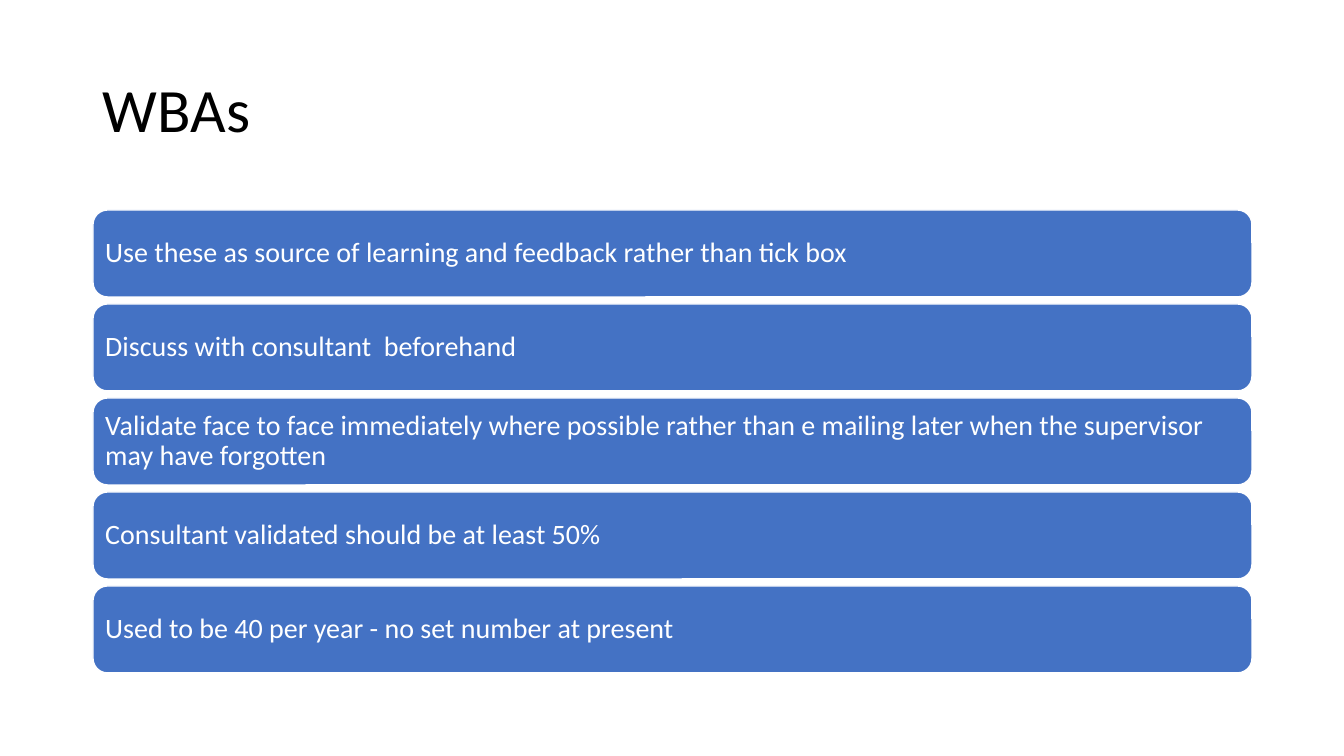
import pptx
import pptx.util
import pptx.dml.color
import pptx.enum.shapes
import pptx.enum.text

TITLE = "WBAs"
ADVICE = [
    "Use these as source of learning and feedback rather than tick box",
    "Discuss with consultant  beforehand",
    "Validate face to face immediately where possible rather than e mailing "
    "later when the supervisor may have forgotten",
    "Consultant validated should be at least 50%",
    "Used to be 40 per year - no set number at present",
]

BLACK = pptx.dml.color.RGBColor(0x00, 0x00, 0x00)
WHITE = pptx.dml.color.RGBColor(0xFF, 0xFF, 0xFF)
BLUE = pptx.dml.color.RGBColor(0x44, 0x72, 0xC4)
FONT = "Calibri"

SLIDE_W, SLIDE_H = 1344, 756
EMU_PER_PX = 12192000 / SLIDE_W
LEFT, WIDTH = 93, 1159
TITLE_TOP, TITLE_H = 40, 146
BAR_TOP, BAR_H, BAR_PITCH = 210, 87, 94


def px(n):
    return pptx.util.Emu(round(n * EMU_PER_PX))


def write(sp, text, *, size, color, inset):
    """Set the text of sp, left-aligned and vertically centred."""
    tf = sp.text_frame
    tf.word_wrap = True
    tf.vertical_anchor = pptx.enum.text.MSO_ANCHOR.MIDDLE
    tf.margin_left = tf.margin_right = tf.margin_top = tf.margin_bottom = px(inset)
    p = tf.paragraphs[0]
    p.alignment = pptx.enum.text.PP_ALIGN.LEFT
    p.line_spacing = 0.9
    r = p.add_run()
    r.text = text
    r.font.name = FONT
    r.font.size = pptx.util.Pt(size)
    r.font.color.rgb = color


def add_bar(s, top, text):
    sp = s.shapes.add_shape(pptx.enum.shapes.MSO_SHAPE.ROUNDED_RECTANGLE,
                            px(LEFT), px(top), px(WIDTH), px(BAR_H))
    sp.shadow.inherit = False
    sp.fill.solid()
    sp.fill.fore_color.rgb = BLUE
    sp.line.color.rgb = WHITE
    sp.line.width = pptx.util.Pt(1)
    write(sp, text, size=20, color=WHITE, inset=8)


def main():
    prs = pptx.Presentation()
    prs.slide_width, prs.slide_height = px(SLIDE_W), px(SLIDE_H)
    s = prs.slides.add_slide(prs.slide_layouts[6])

    title = s.shapes.add_textbox(px(LEFT), px(TITLE_TOP), px(WIDTH), px(TITLE_H))
    write(title, TITLE, size=44, color=BLACK, inset=10)
    for i, text in enumerate(ADVICE):
        add_bar(s, BAR_TOP + i * BAR_PITCH, text)

    prs.save("out.pptx")


if __name__ == "__main__":
    main()
